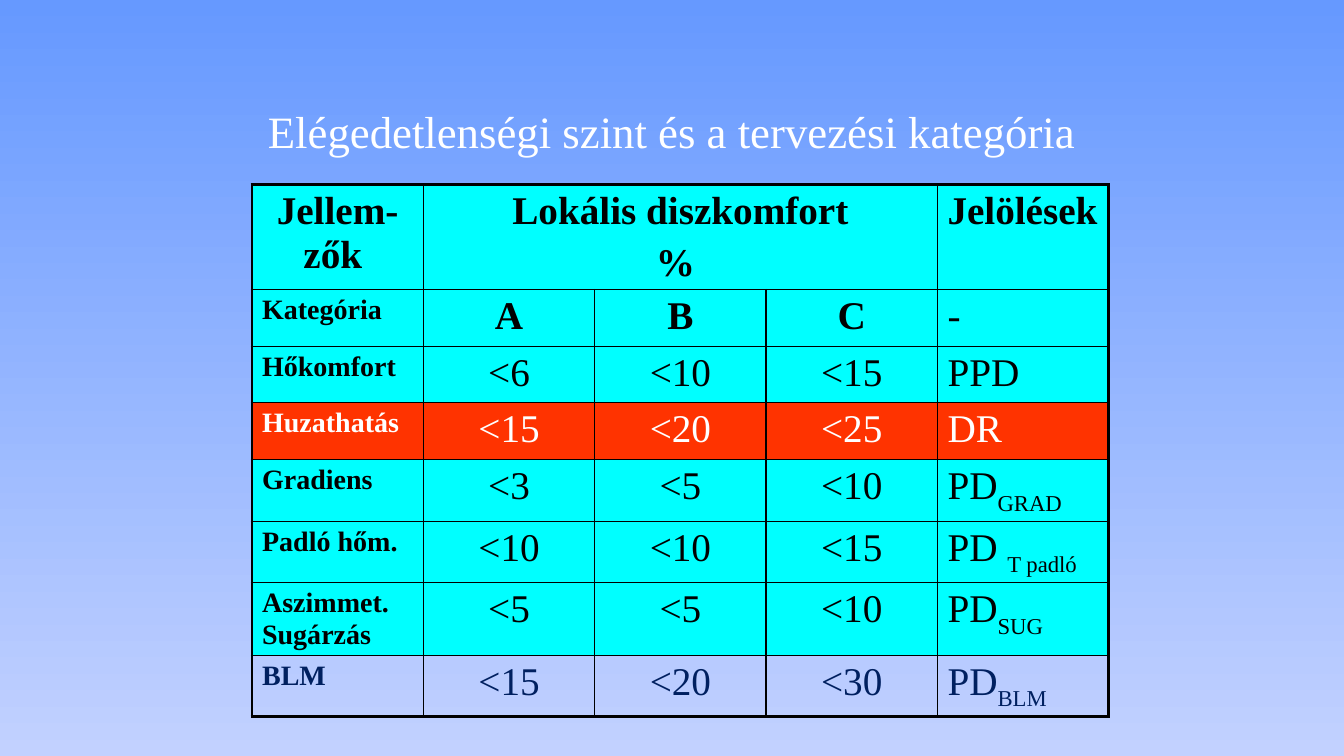
from dataclasses import dataclass

import lxml.etree
import pptx
import pptx.dml.color
import pptx.enum.text
import pptx.oxml.ns
import pptx.slide
import pptx.table
import pptx.text.text
import pptx.util

Pt = pptx.util.Pt
RGBColor = pptx.dml.color.RGBColor
CENTER = pptx.enum.text.PP_ALIGN.CENTER
LEFT = pptx.enum.text.PP_ALIGN.LEFT

SKY_TOP = RGBColor(0x66, 0x99, 0xFF)
SKY_BOTTOM = RGBColor(0xC2, 0xD1, 0xFF)
WHITE = RGBColor(0xFF, 0xFF, 0xFF)
BLACK = RGBColor(0x00, 0x00, 0x00)
CYAN = RGBColor(0x00, 0xFF, 0xFF)
RED = RGBColor(0xFF, 0x33, 0x00)
NAVY = RGBColor(0x00, 0x20, 0x60)

FONT = "Times New Roman"
LABEL_SIZE = 20
VALUE_SIZE = 28
OUTER_LINE = 2.25
INNER_LINE = 1
COLUMN_COUNT = 5
COLUMN_WIDTH = 122.4
HEADER_HEIGHT = 42
ROW_HEIGHT = 40.5
TABLE_LEFT, TABLE_TOP, TABLE_HEIGHT = 180, 132, 381


@dataclass
class CategoryRow:
    label: str
    limits: tuple[str, str, str]
    symbol: str
    subscript: str = ""
    fill: RGBColor | None = CYAN
    color: RGBColor = BLACK
    bold_limits: bool = False


CATEGORY_ROWS = [
    CategoryRow("Kategória", ("A", "B", "C"), "-", bold_limits=True),
    CategoryRow("Hőkomfort", ("<6", "<10", "<15"), "PPD"),
    CategoryRow("Huzathatás", ("<15", "<20", "<25"), "DR", fill=RED, color=WHITE),
    CategoryRow("Gradiens", ("<3", "<5", "<10"), "PD", "GRAD"),
    CategoryRow("Padló hőm.", ("<10", "<10", "<15"), "PD ", "T padló"),
    CategoryRow("Aszimmet. Sugárzás", ("<5", "<5", "<10"), "PD", "SUG"),
    CategoryRow("BLM", ("<15", "<20", "<30"), "PD", "BLM", fill=None, color=NAVY),
]


def add_xml(parent: lxml.etree.ElementBase, tag: str, **attributes: str) -> lxml.etree.ElementBase:
    return lxml.etree.SubElement(parent, pptx.oxml.ns.qn(tag), attributes)


def format_paragraph(
    paragraph: pptx.text.text._Paragraph, size: float, color: RGBColor, bold: bool, alignment: int
) -> None:
    paragraph.alignment = alignment
    paragraph.font.name = FONT
    paragraph.font.size = Pt(size)
    paragraph.font.bold = bold
    paragraph.font.color.rgb = color


def write_cell(
    cell: pptx.table._Cell,
    text: str,
    color: RGBColor = BLACK,
    size: float = VALUE_SIZE,
    bold: bool = False,
    alignment: int = CENTER,
    subscript: str = "",
) -> None:
    cell.text = text
    if subscript:
        run = cell.text_frame.paragraphs[0].add_run()
        run.text = subscript
        run.font._element.set("baseline", "-30000")
    for paragraph in cell.text_frame.paragraphs:
        format_paragraph(paragraph, size, color, bold, alignment)
        properties = paragraph._p.get_or_add_pPr()
        spacing = add_xml(properties, "a:spcBef")
        add_xml(spacing, "a:spcPct", val="20000")
        properties.insert(0, spacing)


def draw_borders(cell: pptx.table._Cell, row: int, column: int, row_count: int) -> None:
    outer_sides = {
        "a:lnL": column == 0,
        "a:lnR": column == COLUMN_COUNT - 1,
        "a:lnT": row == 0,
        "a:lnB": row == row_count - 1,
    }
    properties = cell._tc.get_or_add_tcPr()
    for position, (tag, is_outer) in enumerate(outer_sides.items()):
        width = Pt(OUTER_LINE if is_outer else INNER_LINE)
        line = add_xml(properties, tag, w=str(int(width)))
        add_xml(add_xml(line, "a:solidFill"), "a:srgbClr", val=str(BLACK))
        properties.insert(position, line)


def fill_cell(cell: pptx.table._Cell, color: RGBColor | None) -> None:
    if color is None:
        cell.fill.background()
    else:
        cell.fill.solid()
        cell.fill.fore_color.rgb = color


def paint_background(slide: pptx.slide.Slide) -> None:
    fill = slide.background.fill
    fill.gradient()
    fill.gradient_angle = 270
    for stop, color in zip(fill.gradient_stops, (SKY_TOP, SKY_BOTTOM)):
        stop.color.rgb = color


def write_title(slide: pptx.slide.Slide) -> None:
    title = slide.shapes.title
    title.left, title.top, title.width, title.height = Pt(72), Pt(48), Pt(816), Pt(90)
    title.text_frame.text = "Elégedetlenségi szint és a tervezési kategória"
    title.text_frame.vertical_anchor = pptx.enum.text.MSO_ANCHOR.MIDDLE
    format_paragraph(title.text_frame.paragraphs[0], 32, WHITE, False, CENTER)


def add_category_table(slide: pptx.slide.Slide) -> None:
    row_count = len(CATEGORY_ROWS) + 1
    shape = slide.shapes.add_table(
        row_count, COLUMN_COUNT, Pt(TABLE_LEFT), Pt(TABLE_TOP),
        Pt(COLUMN_COUNT * COLUMN_WIDTH), Pt(TABLE_HEIGHT),
    )
    table = shape.table
    table.first_row = False
    table.horz_banding = False
    for column in table.columns:
        column.width = Pt(COLUMN_WIDTH)
    for index, row in enumerate(table.rows):
        row.height = Pt(ROW_HEIGHT if index else HEADER_HEIGHT)
    shape.height = Pt(TABLE_HEIGHT)

    fills = [CYAN] + [category.fill for category in CATEGORY_ROWS]
    for row, fill in enumerate(fills):
        for column in range(COLUMN_COUNT):
            cell = table.cell(row, column)
            fill_cell(cell, fill)
            draw_borders(cell, row, column, row_count)

    table.cell(0, 1).merge(table.cell(0, 3))
    write_cell(table.cell(0, 0), "Jellem-zők ", bold=True)
    write_cell(table.cell(0, 1), "Lokális diszkomfort\n% ", bold=True)
    write_cell(table.cell(0, 4), "Jelölések", bold=True, alignment=LEFT)

    for row, category in enumerate(CATEGORY_ROWS, start=1):
        color = category.color
        write_cell(table.cell(row, 0), category.label, color, LABEL_SIZE, True, LEFT)
        for column, limit in enumerate(category.limits, start=1):
            write_cell(table.cell(row, column), limit, color, bold=category.bold_limits)
        write_cell(
            table.cell(row, 4), category.symbol, color,
            alignment=LEFT, subscript=category.subscript,
        )


def main() -> None:
    presentation = pptx.Presentation()
    presentation.slide_width = Pt(960)
    presentation.slide_height = Pt(540)
    slide = presentation.slides.add_slide(presentation.slide_layouts[5])
    paint_background(slide)
    write_title(slide)
    add_category_table(slide)
    presentation.save("out.pptx")


if __name__ == "__main__":
    main()
